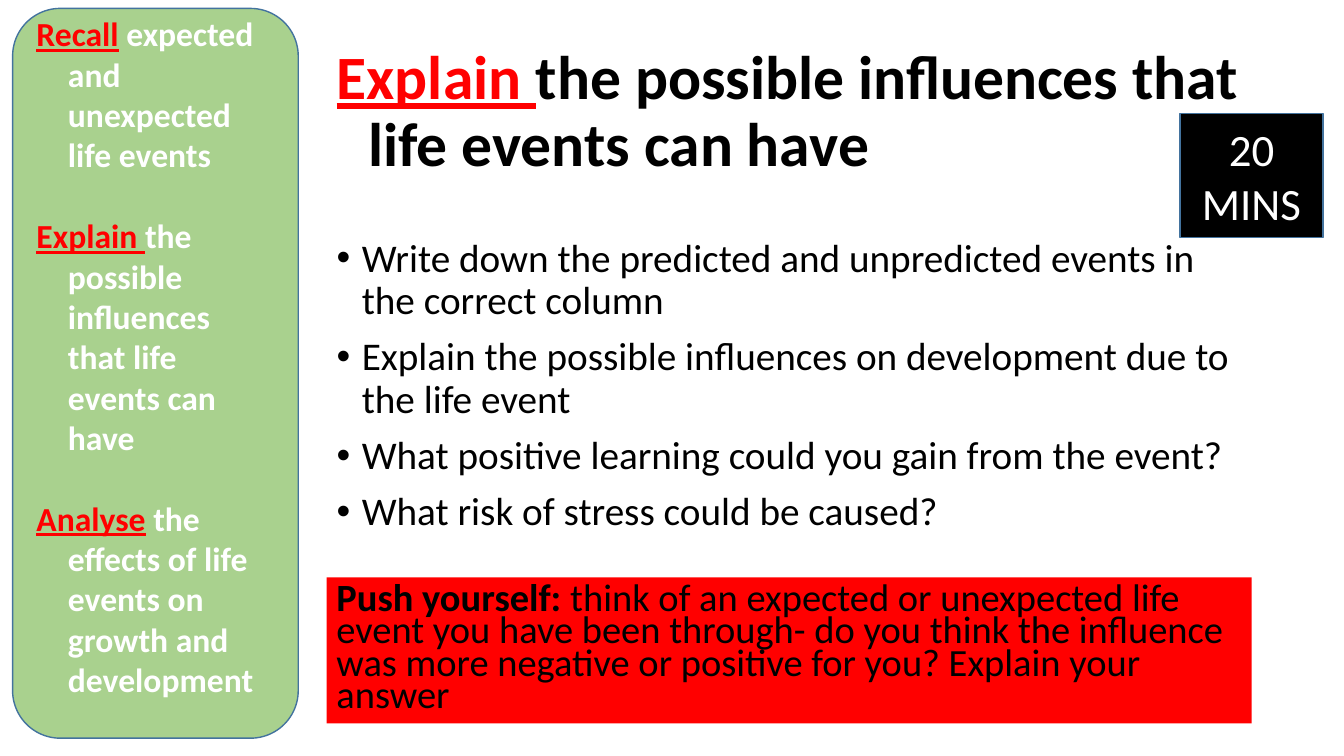
from pptx import Presentation
from pptx import util as u
from pptx.dml.color import RGBColor
from pptx.enum import shapes, text

PX = 9525
BLACK = RGBColor(0, 0, 0)
WHITE = RGBColor(255, 255, 255)
RED = RGBColor(255, 0, 0)
GREEN = RGBColor(0xA9, 0xD1, 0x8E)
BLUE = RGBColor(0x43, 0x73, 0x9E)

GOALS = [
    ("Recall", " expected and unexpected life events"),
    ("Explain ", "the possible influences that life events can have"),
    ("Analyse", " the effects of life events on growth and development"),
]
TASKS = [
    "Write down the predicted and unpredicted events in the correct column",
    "Explain the possible influences on development due to the life event",
    "What positive learning could you gain from the event?",
    "What risk of stress could be caused?",
]


def px(n):
    return u.Emu(n * PX)


def place(shape, box):
    shape.left, shape.top, shape.width, shape.height = map(px, box)


def add_run(para, words, size, color, bold=False, line=False):
    run = para.add_run()
    run.text = words
    font = run.font
    font.name, font.size, font.bold = "Calibri", u.Pt(size), bold
    font.underline = line
    font.color.rgb = color


def hang(para, depth):
    """Hanging indent of depth px."""
    props = para._p.get_or_add_pPr()
    props.set("marL", str(depth * PX))
    props.set("indent", str(-depth * PX))


def add_goal(para, goal, size, color):
    """Underlined red verb, then the rest in the given colour."""
    verb, rest = goal
    para.alignment = text.PP_ALIGN.LEFT
    hang(para, 30)
    add_run(para, verb, size, RED, True, True)
    add_run(para, rest, size, color, True)


def lines(frame, items):
    """Yield a paragraph for each item, starting with the one present."""
    for i, item in enumerate(items):
        yield (frame.add_paragraph() if i else frame.paragraphs[0]), item


def set_up(frame, anchor):
    frame.word_wrap = True
    frame.auto_size = text.MSO_AUTO_SIZE.NONE
    frame.vertical_anchor = anchor


def add_block(slide, kind, box, fill, edge=None):
    shape = slide.shapes.add_shape(kind, *map(px, box))
    shape.shadow.inherit = False
    shape.fill.solid()
    shape.fill.fore_color.rgb = fill
    if edge is None:
        shape.line.fill.background()
    else:
        shape.line.color.rgb = edge
        shape.line.width = u.Pt(1)
    set_up(shape.text_frame, text.MSO_ANCHOR.MIDDLE)
    return shape.text_frame


def add_title(slide, box):
    title = slide.shapes.title
    place(title, box)
    set_up(title.text_frame, text.MSO_ANCHOR.MIDDLE)
    para = title.text_frame.paragraphs[0]
    para.line_spacing = 0.9
    add_goal(para, GOALS[1], 44, BLACK)


def add_tasks(slide, box):
    body = slide.placeholders[1]
    place(body, box)
    frame = body.text_frame
    set_up(frame, text.MSO_ANCHOR.TOP)
    frame.margin_top = px(59)
    for para, task in lines(frame, TASKS):
        hang(para, 24)
        para.line_spacing = 0.9
        para.space_before = u.Pt(10)
        add_run(para, task, 28, BLACK)


def add_goals(slide, box):
    frame = add_block(slide, shapes.MSO_SHAPE.ROUNDED_RECTANGLE, box, GREEN, BLUE)
    frame.margin_bottom = px(37)
    for para, goal in lines(frame, GOALS):
        add_goal(para, goal, 24, WHITE)
        if goal != GOALS[0]:
            para.space_before = u.Pt(29)


def add_timer(slide, box):
    frame = add_block(slide, shapes.MSO_SHAPE.RECTANGLE, box, BLACK, BLUE)
    para = frame.paragraphs[0]
    para.alignment = text.PP_ALIGN.CENTER
    add_run(para, "20 MINS", 32, WHITE)


def add_push(slide, box):
    frame = add_block(slide, shapes.MSO_SHAPE.RECTANGLE, box, RED)
    para = frame.paragraphs[0]
    para.alignment = text.PP_ALIGN.LEFT
    para.line_spacing = 0.7
    add_run(para, "Push yourself: ", 27.5, BLACK, True)
    add_run(para, "think of an expected or unexpected life event you have been "
            "through- do you think the influence was more negative or positive "
            "for you? Explain your answer", 27.5, BLACK)


def main():
    deck = Presentation()
    deck.slide_width, deck.slide_height = px(1280), px(720)
    slide = deck.slides.add_slide(deck.slide_layouts[1])
    add_title(slide, (311, 38, 881, 139))
    add_tasks(slide, (311, 168, 869, 367))
    add_goals(slide, (12, 8, 272, 695))
    add_timer(slide, (1124, 108, 136, 118))
    add_push(slide, (311, 550, 881, 139))
    deck.save("out.pptx")


if __name__ == "__main__":
    main()
